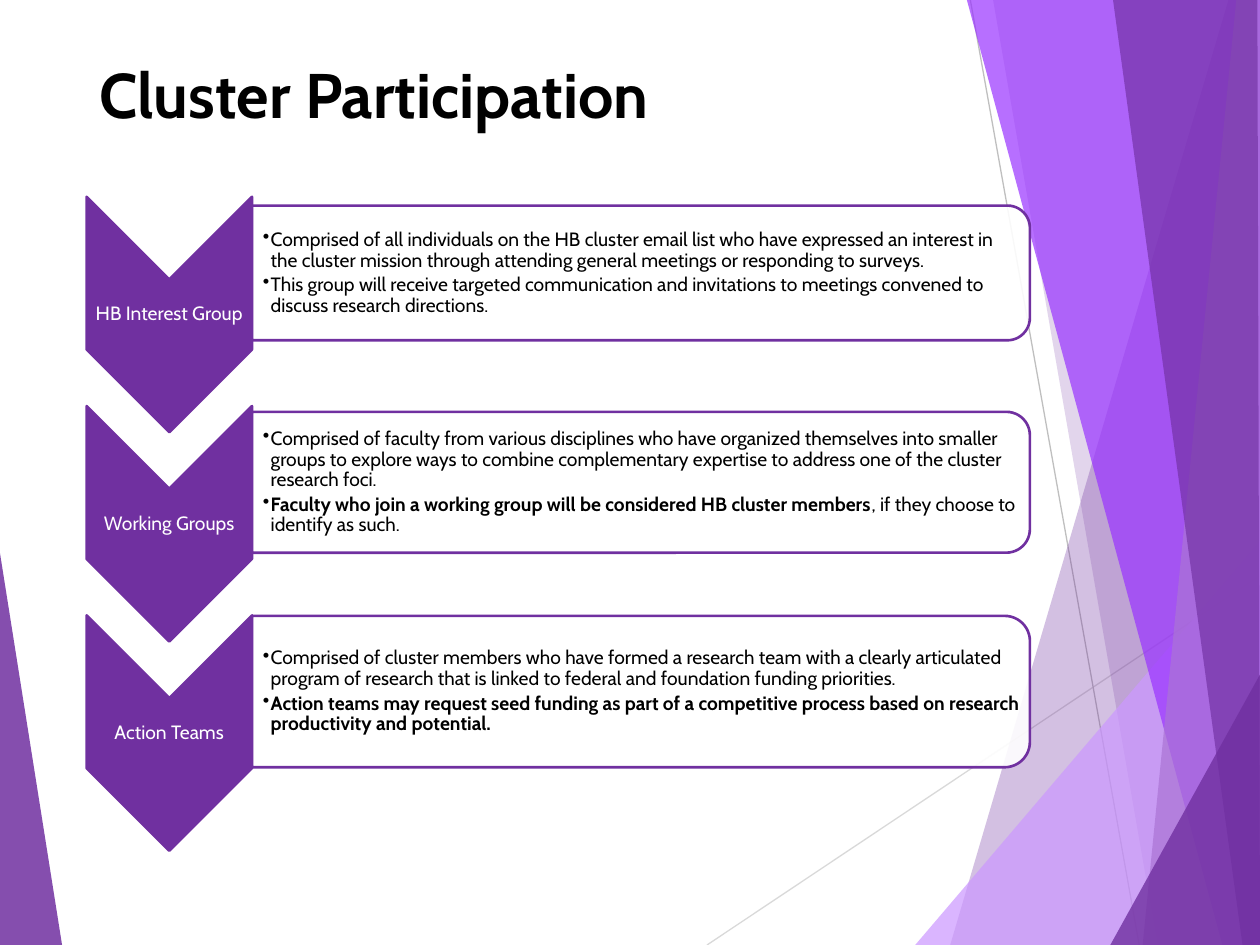
from lxml import etree
from pptx import Presentation
from pptx import util as u
from pptx.dml import color as dml
from pptx.enum import shapes, text
from pptx.oxml import ns

FONT = "Cabin"
PURPLE, WHITE, BLACK = "7030A0", "FFFFFF", "000000"


def rgb(value):
    return dml.RGBColor.from_string(value)


def add_text(para, words, size=11, color=BLACK, bold=False):
    span = para.add_run()
    span.text = words
    span.font.name = FONT
    span.font.size = u.Pt(size)
    span.font.bold = bold
    span.font.color.rgb = rgb(color)


class SlideBuilder:
    """Holds the current slide and draws each kind of element on it."""

    def __init__(self, page, line_width=1.5):
        self.page = page
        self.line_width = line_width

    def paint(self, shape, color, opacity=100):
        shape.shadow.inherit = False
        shape.fill.solid()
        shape.fill.fore_color.rgb = rgb(color)
        if opacity < 100:
            fill = shape.fill._xPr.find(ns.qn("a:solidFill"))
            etree.SubElement(fill[0], ns.qn("a:alpha"), val=str(opacity * 1000))

    def facet(self, points, color, opacity):
        corners = [(u.Pt(x), u.Pt(y)) for x, y in points]
        builder = self.page.shapes.build_freeform(*corners[0], scale=1.0)
        builder.add_line_segments(corners[1:], close=True)
        shape = builder.convert_to_shape()
        self.paint(shape, color, opacity)
        shape.line.fill.background()

    def line(self, start, end, color):
        line = self.page.shapes.add_connector(
            shapes.MSO_CONNECTOR.STRAIGHT, *map(u.Pt, start + end))
        line.line.color.rgb = rgb(color)
        line.line.width = u.Pt(0.75)
        etree.SubElement(line._element.spPr, ns.qn("a:effectLst"))

    def title(self, words, left, top, width, height):
        box = self.page.shapes.title
        box.left, box.top, box.width, box.height = map(u.Pt, (left, top, width, height))
        box.text_frame.vertical_anchor = text.MSO_ANCHOR.TOP
        para = box.text_frame.paragraphs[0]
        para.alignment = text.PP_ALIGN.LEFT
        add_text(para, words, size=36, bold=True)

    def turned_shape(self, kind, left, middle, width, height, color, opacity=100):
        """Draw a shape turned by 90 degrees; width and height are as seen."""
        shape = self.page.shapes.add_shape(
            kind, u.Pt(left + (width - height) / 2), u.Pt(middle - width / 2),
            u.Pt(height), u.Pt(width))
        shape.rotation = 90
        self.paint(shape, color, opacity)
        shape.line.color.rgb = rgb(PURPLE)
        shape.line.width = u.Pt(self.line_width)

    def text_box(self, left, middle, width, height, inset=0.7):
        box = self.page.shapes.add_textbox(
            u.Pt(left), u.Pt(middle - height / 2), u.Pt(width), u.Pt(height))
        frame = box.text_frame
        frame.word_wrap = True
        frame.vertical_anchor = text.MSO_ANCHOR.MIDDLE
        frame.margin_left = u.Pt(inset)
        frame.margin_right = frame.margin_top = frame.margin_bottom = u.Pt(0.7)
        return frame

    def label(self, words, *place):
        para = self.text_box(*place).paragraphs[0]
        para.alignment = text.PP_ALIGN.CENTER
        para.line_spacing = 0.9
        add_text(para, words, color=WHITE)

    def bullets(self, items, *place):
        frame = self.text_box(*place, inset=6.2)
        for index, spans in enumerate(items):
            para = frame.add_paragraph() if index else frame.paragraphs[0]
            para.line_spacing = 0.9
            para.space_after = u.Pt(2)
            props = para._p.get_or_add_pPr()
            props.set("marL", str(u.Pt(4.5)))
            props.set("indent", str(u.Pt(-4.5)))
            etree.SubElement(props, ns.qn("a:buChar"), char="•")
            for words, bold in spans:
                add_text(para, words, bold=bold)


# Background: facets and thin lines, from back to front
LEFT_FACET = ([(0, 316), (35.5, 540), (0, 540)], PURPLE, 85)
LINES = [((404, 540), (720, 329), "D9D9D9"), ((554.5, 0), (651, 540), "BFBFBF")]
RIGHT_FACETS = [
    ([(702, 0), (543, 540), (720, 540), (720, 0)], PURPLE, 30),
    ([(567.5, 0), (661.5, 540), (720, 540), (720, 0)], PURPLE, 20),
    ([(523, 540), (720, 309), (720, 540)], "CC99FF", 72),
    ([(552.5, 0), (698.5, 540), (720, 540), (720, 0)], "9933FF", 70),
    ([(706.5, 0), (653, 540), (720, 540), (720, 0)], "AB74D5", 70),
    ([(636, 0), (710, 540), (720, 540), (718.5, 0)], PURPLE, 65),
    ([(634.5, 540), (720, 385.5), (720, 540)], PURPLE, 80),
]

# Each level: label, panel height, bullets made of (words, bold) spans
LEVELS = [
    ("HB Interest Group", 77, [
        [("Comprised of all individuals on the HB cluster email list who have expressed "
          "an interest in the cluster mission through attending general meetings or "
          "responding to surveys.", False)],
        [("This group will receive targeted communication and invitations to meetings "
          "convened to discuss research directions.", False)]]),
    ("Working Groups", 80.5, [
        [("Comprised of faculty from various disciplines who have organized themselves "
          "into smaller groups to explore ways to combine complementary expertise to "
          "address one of the cluster research foci.", False)],
        [("Faculty who join a working group will be considered HB cluster members", True),
         (", if they choose to identify as such.", False)]]),
    ("Action Teams", 86.5, [
        [("Comprised of cluster members who have formed a research team with a clearly "
          "articulated program of research that is linked to federal and foundation "
          "funding priorities.", False)],
        [("Action teams may request seed funding as part of a competitive process based "
          "on research productivity and potential.", True)]]),
]
LEFT, CHEVRON_WIDTH, CHEVRON_HEIGHT = 49.5, 94.5, 134.5
PANEL_LEFT, PANEL_WIDTH = LEFT + CHEVRON_WIDTH, 444.5
FIRST_MIDDLE, STEP, CHEVRON_DROP = 156, 119.6, 23.7


def main():
    deck = Presentation()
    deck.slide_width, deck.slide_height = u.Pt(720), u.Pt(540)
    builder = SlideBuilder(deck.slides.add_slide(deck.slide_layouts[5]))

    builder.facet(*LEFT_FACET)
    for line in LINES:
        builder.line(*line)
    for facet in RIGHT_FACETS:
        builder.facet(*facet)

    builder.title("Cluster Participation", LEFT, 28, 621, 104.5)

    # Chevron list: each chevron sits a little lower than its panel
    kinds = shapes.MSO_SHAPE
    for index, (name, height, items) in enumerate(LEVELS):
        middle = FIRST_MIDDLE + index * STEP
        center = middle + CHEVRON_DROP
        builder.turned_shape(kinds.CHEVRON, LEFT, center,
                             CHEVRON_WIDTH, CHEVRON_HEIGHT, PURPLE)
        builder.label(name, LEFT, center, CHEVRON_WIDTH, 40)
        builder.turned_shape(kinds.ROUND_2_SAME_RECTANGLE, PANEL_LEFT, middle,
                             PANEL_WIDTH, height, WHITE, opacity=90)
        builder.bullets(items, PANEL_LEFT, middle, PANEL_WIDTH - 4, height - 8)

    deck.save("out.pptx")


if __name__ == "__main__":
    main()
